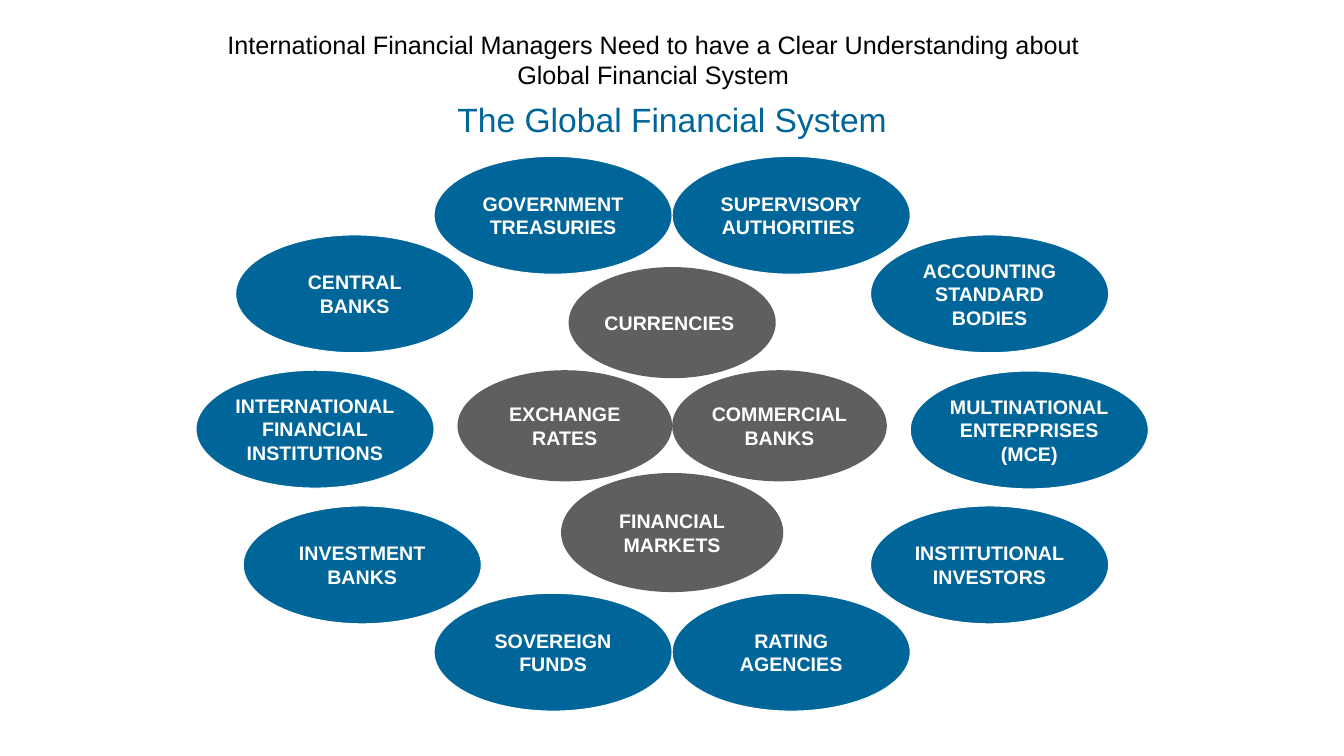
import pptx
import pptx.dml.color
import pptx.enum.shapes
import pptx.enum.text
import pptx.util

Cm = pptx.util.Cm
Pt = pptx.util.Pt
RGBColor = pptx.dml.color.RGBColor

BLUE = RGBColor(0x00, 0x66, 0x99)
GREY = RGBColor(0x5F, 0x5F, 0x5F)
WHITE = RGBColor(0xFF, 0xFF, 0xFF)
BLACK = RGBColor(0x00, 0x00, 0x00)

OUTER_SIZE = (6, 2.97)
CENTRE_X = 16.94
OUTER_RING = [
    (10.94, 3.94, "GOVERNMENT\nTREASURIES"),
    (CENTRE_X, 3.94, "SUPERVISORY\nAUTHORITIES "),
    (5.94, 5.92, "CENTRAL\nBANKS"),
    (21.94, 5.92, "ACCOUNTING\nSTANDARD\nBODIES"),
    (4.94, 9.33, "INTERNATIONAL\nFINANCIAL\nINSTITUTIONS"),
    (22.94, 9.35, "MULTINATIONAL\nENTERPRISES\n(MCE)"),
    (6.13, 12.75, "INVESTMENT\nBANKS"),
    (21.94, 12.75, "INSTITUTIONAL\nINVESTORS"),
    (10.94, 14.95, "SOVEREIGN\nFUNDS"),
    (CENTRE_X, 14.95, "RATING\nAGENCIES"),
]
CORE = [
    (14.33, 6.73, 5.22, 2.8, "CURRENCIES "),
    (11.53, 9.33, 5.41, 2.8, "EXCHANGE\nRATES"),
    (CENTRE_X, 9.33, 5.41, 2.8, "COMMERCIAL\nBANKS"),
    (14.14, 11.92, 5.6, 3, "FINANCIAL\nMARKETS"),
]


def write_text(frame, text, *, size, color, bold=False, wrap=True,
               anchor=pptx.enum.text.MSO_ANCHOR.MIDDLE):
    frame.word_wrap = wrap
    frame.vertical_anchor = anchor
    frame.text = text
    for paragraph in frame.paragraphs:
        paragraph.alignment = pptx.enum.text.PP_ALIGN.CENTER
        for run in paragraph.runs:
            run.font.name = "Arial"
            run.font.size = Pt(size)
            run.font.bold = bold
            run.font.color.rgb = color


class FinanceSlide:
    def __init__(self, slide, label_size=14):
        self.slide = slide
        self.label_size = label_size

    def heading(self, left, top, width, height, text, **style):
        box = self.slide.shapes.add_textbox(Cm(left), Cm(top), Cm(width), Cm(height))
        write_text(box.text_frame, text, **style)

    def ellipse(self, left, top, width, height, text, fill, outline=None):
        member = self.slide.shapes.add_shape(
            pptx.enum.shapes.MSO_SHAPE.OVAL, Cm(left), Cm(top), Cm(width), Cm(height))
        member.shadow.inherit = False
        member.fill.solid()
        member.fill.fore_color.rgb = fill
        if outline is None:
            member.line.fill.background()
        else:
            member.line.color.rgb = outline
            member.line.width = Pt(0.75)
        write_text(member.text_frame, text, size=self.label_size, color=WHITE,
                   bold=True, wrap=False)


def main():
    deck = pptx.Presentation()
    deck.slide_width = Cm(33.87)
    deck.slide_height = Cm(19.05)
    system = FinanceSlide(deck.slides.add_slide(deck.slide_layouts[6]))

    system.heading(4.24, 2.26, 25.4, 1.47, "The Global Financial System",
                   size=24, color=BLUE)
    for left, top, width, height, label in CORE:
        system.ellipse(left, top, width, height, label, GREY)
    for left, top, label in OUTER_RING:
        system.ellipse(left, top, *OUTER_SIZE, label, BLUE, outline=WHITE)
    system.heading(4.93, 0.62, 23.06, 1.8,
                   "International Financial Managers Need to have a Clear "
                   "Understanding about Global Financial System",
                   size=18, color=BLACK, anchor=pptx.enum.text.MSO_ANCHOR.TOP)

    deck.save("out.pptx")


if __name__ == "__main__":
    main()
